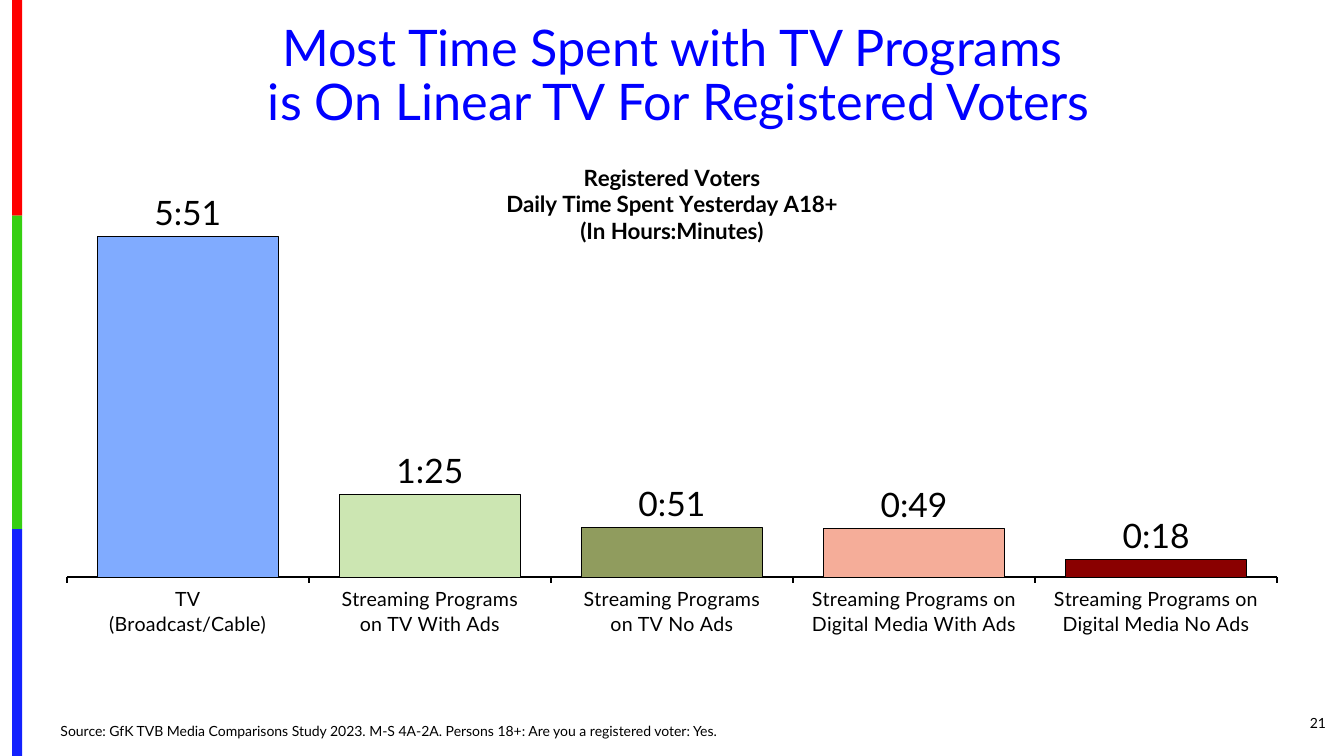
from lxml import etree
from pptx import Presentation
from pptx.chart.data import CategoryChartData
from pptx.dml.color import RGBColor
from pptx.enum.chart import XL_CHART_TYPE, XL_LABEL_POSITION, XL_TICK_LABEL_POSITION, XL_TICK_MARK
from pptx.enum.shapes import MSO_SHAPE
from pptx.enum.text import MSO_ANCHOR, MSO_AUTO_SIZE, PP_ALIGN
from pptx.oxml import parse_xml
from pptx.oxml.ns import nsdecls, qn
from pptx.util import Inches, Pt


def color(hex_value):
    return RGBColor.from_string(hex_value)


def style(font, size, hex_value="000000", bold=False):
    formats = {"name": "Lato", "size": Pt(size), "bold": bold}
    for attribute, value in formats.items():
        setattr(font, attribute, value)
    font.color.rgb = color(hex_value)


deck = Presentation()
deck.slide_width, deck.slide_height = Inches(13.33), Inches(7.5)
slide = deck.slides.add_slide(deck.slide_layouts[1])

# Stripe down the left edge
top = 0
for bottom, hue in [(2.14, "FE0000"), (5.25, "36CF12"), (7.5, "1322FE")]:
    stripe = slide.shapes.add_shape(
        MSO_SHAPE.RECTANGLE, Inches(0.12), Inches(top), Inches(0.1), Inches(bottom - top))
    stripe.shadow.inherit = False
    stripe.fill.solid()
    stripe.fill.fore_color.rgb = color(hue)
    stripe.line.fill.background()
    top = bottom

# Headline, source and page number
headline = slide.shapes.title
source = slide.placeholders[1]
page_number = slide.shapes.add_textbox(0, 0, 0, 0)
texts = [
    (headline, (0.46, 0.17, 12.42, 1.19), MSO_ANCHOR.MIDDLE, PP_ALIGN.CENTER, 36, "0000FF",
     "Most Time Spent with TV Programs\v is On Linear TV For Registered Voters"),
    (source, (0.5, 7.14, 9.58, 0.25), MSO_ANCHOR.BOTTOM, PP_ALIGN.LEFT, 10, "000000",
     "Source: GfK TVB Media Comparisons Study 2023. M-S 4A-2A. "
     "Persons 18+: Are you a registered voter: Yes."),
    (page_number, (12.17, 6.98, 1.08, 0.4), MSO_ANCHOR.MIDDLE, PP_ALIGN.RIGHT, 10, "000000", "21"),
]
for box, place, anchor, alignment, size, hue, words in texts:
    box.left, box.top, box.width, box.height = map(Inches, place)
    frame = box.text_frame
    frame.text = words
    frame.word_wrap = True
    frame.auto_size = MSO_AUTO_SIZE.NONE
    frame.vertical_anchor = anchor
    paragraph = frame.paragraphs[0]
    if box is source:
        properties = paragraph._p.get_or_add_pPr()
        properties.set("marL", "0")
        properties.set("indent", "0")
        etree.SubElement(properties, qn("a:buNone"))
    paragraph.alignment = alignment
    paragraph.line_spacing = 0.9
    paragraph.space_before = Pt(0)
    style(paragraph.font, size, hue)

# Daily viewing time: minutes and bar colour
viewing = [
    ("TV\n(Broadcast/Cable)", 352, "80ABFF"),
    ("Streaming Programs\non TV With Ads", 85, "CCE6B2"),
    ("Streaming Programs\non TV No Ads", 51, "909C5E"),
    ("Streaming Programs on Digital Media With Ads", 50, "F5AD99"),
    ("Streaming Programs on Digital Media No Ads", 18, "8A0000"),
]
time_format = "h:mm;@"
data = CategoryChartData(number_format=time_format)
data.categories = [label for label, minutes, hue in viewing]
data.add_series("Series 1", [round(minutes / 1440, 6) for label, minutes, hue in viewing])
chart = slide.shapes.add_chart(
    XL_CHART_TYPE.COLUMN_CLUSTERED, Inches(0.54), Inches(1.42), Inches(12.25), Inches(5.45), data).chart
style(chart.font, 10)
chart.has_legend = False

# Chart title over the plot
chart.has_title = True
chart.chart_title.include_in_layout = True
chart_heading = chart.chart_title.text_frame
chart_heading.text = "Registered Voters\nDaily Time Spent Yesterday A18+\n(In Hours:Minutes)"
for paragraph in chart_heading.paragraphs:
    style(paragraph.font, 16, bold=True)
    for run in paragraph.runs:
        style(run.font, 16, bold=True)

# Axes
hours = chart.value_axis
hours.minimum_scale, hours.maximum_scale = 0, 0.3
hours.has_major_gridlines = False
hours.visible = False
programs = chart.category_axis
programs.major_tick_mark = XL_TICK_MARK.OUTSIDE
programs.tick_label_position = XL_TICK_LABEL_POSITION.LOW
programs.format.line.color.rgb = color("000000")
programs.format.line.width = Pt(1.5)
style(programs.tick_labels.font, 14)

# Bars and their labels
plot = chart.plots[0]
plot.gap_width = 34
plot.vary_by_categories = False
bars = plot.series[0]
bars.format.fill.solid()
bars.format.fill.fore_color.rgb = color("CCCCCC")
for index, (label, minutes, hue) in enumerate(viewing):
    bar = bars.points[index].format
    bar.fill.solid()
    bar.fill.fore_color.rgb = color(hue)
    bar.line.color.rgb = color("000000")
    bar.line.width = Pt(0.75)
times = bars.data_labels
times.show_value = True
times.number_format = time_format
times.number_format_is_linked = False
times.position = XL_LABEL_POSITION.OUTSIDE_END
style(times.font, 24)

# Fixed inner plot area
plot_area = chart._chartSpace.chart.plotArea
for old_layout in plot_area.findall(qn("c:layout")):
    plot_area.remove(old_layout)
bounds = {"x": 0.01, "y": 0.03, "w": 0.98, "h": 0.76}
settings = "".join(f'<c:{side} val="{share}"/>' for side, share in bounds.items())
plot_area.insert(0, parse_xml(
    f'<c:layout {nsdecls("c")}><c:manualLayout><c:layoutTarget val="inner"/>'
    f'<c:xMode val="edge"/><c:yMode val="edge"/>{settings}</c:manualLayout></c:layout>'))

deck.save("out.pptx")
